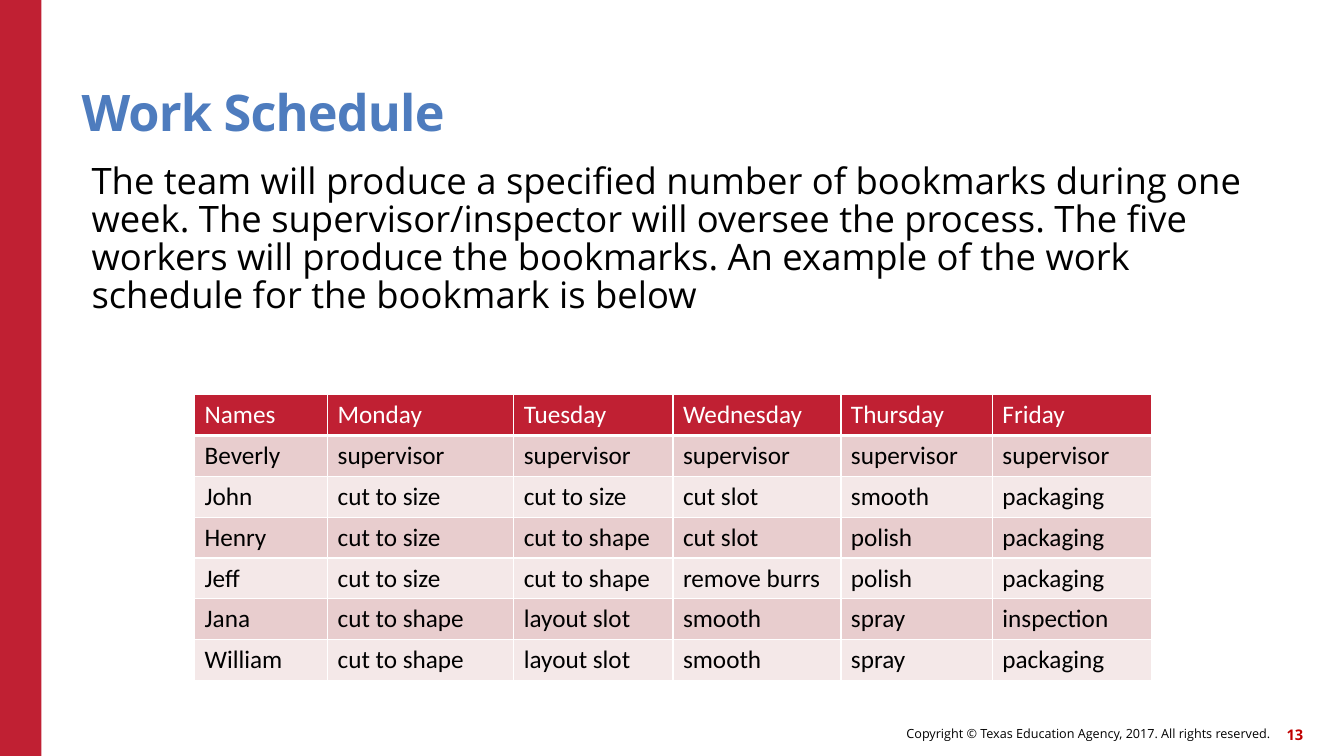
from pptx import Presentation
from pptx.util import Pt
from pptx.dml.color import RGBColor as RGB
from pptx.enum.shapes import MSO_SHAPE as Shape
from pptx.enum.text import PP_ALIGN as Align, MSO_ANCHOR as Anchor
from pptx.oxml import parse_xml
from pptx.oxml.ns import nsdecls

# Content
HUES = {"red": "C02033", "blue": "4E7CBE", "dark": "C00000", "black": "000000",
        "white": "FFFFFF", "rose": "E8CDCE", "pale": "F4E8E8"}

TITLE = "Work Schedule"
BODY = ("The team will produce a specified number of bookmarks during one week. "
        "The supervisor/inspector will oversee the process. The five workers will "
        "produce the bookmarks. An example of the work schedule for the bookmark is below")
RIGHTS = "Copyright © Texas Education Agency, 2017. All rights reserved."
PAGE = "13"

ROWS = [
    ("Names", "Monday", "Tuesday", "Wednesday", "Thursday", "Friday"),
    ("Beverly",) + ("supervisor",) * 5,
    ("John", "cut to size", "cut to size", "cut slot", "smooth", "packaging"),
    ("Henry", "cut to size", "cut to shape", "cut slot", "polish", "packaging"),
    ("Jeff", "cut to size", "cut to shape", "remove burrs", "polish", "packaging"),
    ("Jana", "cut to shape", "layout slot", "smooth", "spray", "inspection"),
    ("William", "cut to shape", "layout slot", "smooth", "spray", "packaging"),
]
WIDTHS = (95, 133, 113.7, 120, 108.2, 113.7)
ROW_H = 29.2

# text, box, inset (x, y), anchor, paragraph format, font format, hue
TEXTS = [
    (RIGHTS, (442.1, 512.6, 465.1, 23), (0, 0), Anchor.MIDDLE,
     {"alignment": Align.RIGHT}, {"size": Pt(9)}, "black"),
    (PAGE, (900.7, 513.4, 30.2, 23), (0, 0), Anchor.MIDDLE,
     {"alignment": Align.RIGHT}, {"size": Pt(10.5), "bold": True}, "dark"),
    (TITLE, (58.3, 32.4, 792, 69.1), (0, 0), Anchor.BOTTOM,
     {"line_spacing": 0.9}, {"size": Pt(36), "bold": True}, "blue"),
    (BODY, (58.3, 113.5, 870.5, 150), (7.2, 3.6), Anchor.TOP,
     {"line_spacing": 0.875}, {"size": Pt(26)}, "black"),
]


def tint(hue):
    return RGB.from_string(HUES[hue])


def put(item, vals):
    for key, val in vals.items():
        setattr(item, key, val)


def style(para, vals, hue, face):
    put(para.font, {"name": face, **vals})
    para.font.color.rgb = tint(hue)


def edge(cell, side, width):
    cell._tc.get_or_add_tcPr().append(parse_xml(
        f'<a:{side} {nsdecls("a")} w="{Pt(width)}"><a:solidFill>'
        f'<a:srgbClr val="{HUES["white"]}"/></a:solidFill></a:{side}>'))


deck = Presentation()
put(deck, {"slide_width": Pt(960), "slide_height": Pt(540)})
slide = deck.slides.add_slide(deck.slide_layouts[6])

# Red side bar
bar = slide.shapes.add_shape(Shape.RECTANGLE, 0, 0, Pt(29.6), Pt(540))
bar.shadow.inherit = False
bar.fill.solid()
bar.fill.fore_color.rgb = tint("red")
bar.line.fill.background()

# Footer, title and body
for text, box, (dx, dy), anchor, form, font, hue in TEXTS:
    frame = slide.shapes.add_textbox(*map(Pt, box)).text_frame
    put(frame, {"word_wrap": True, "vertical_anchor": anchor,
                "margin_left": Pt(dx), "margin_right": Pt(dx),
                "margin_top": Pt(dy), "margin_bottom": Pt(dy)})
    para = frame.paragraphs[0]
    run = para.add_run()
    run.text = text
    put(para, form)
    style(run, font, hue, "Open Sans")
    if text == TITLE:
        run.font._element.set("spc", "-60")

# Schedule table
grid = slide.shapes.add_table(len(ROWS), len(WIDTHS), Pt(139), Pt(281.8),
                              Pt(sum(WIDTHS)), Pt(ROW_H * len(ROWS))).table
for col, width in zip(grid.columns, WIDTHS):
    col.width = Pt(width)
for r, row in enumerate(ROWS):
    grid.rows[r].height = Pt(ROW_H)
    back = "red" if r == 0 else ("pale", "rose")[r % 2]
    for c, text in enumerate(row):
        cell = grid.cell(r, c)
        cell.text = text
        run = cell.text_frame.paragraphs[0].runs[0]
        style(run, {"size": Pt(18), "bold": False},
              "black" if r else "white", "Calibri")
        for side in ("lnL", "lnR", "lnT", "lnB"):
            edge(cell, side, 3 if r == 0 and side == "lnB" else 1)
        cell.fill.solid()
        cell.fill.fore_color.rgb = tint(back)

deck.save("out.pptx")
